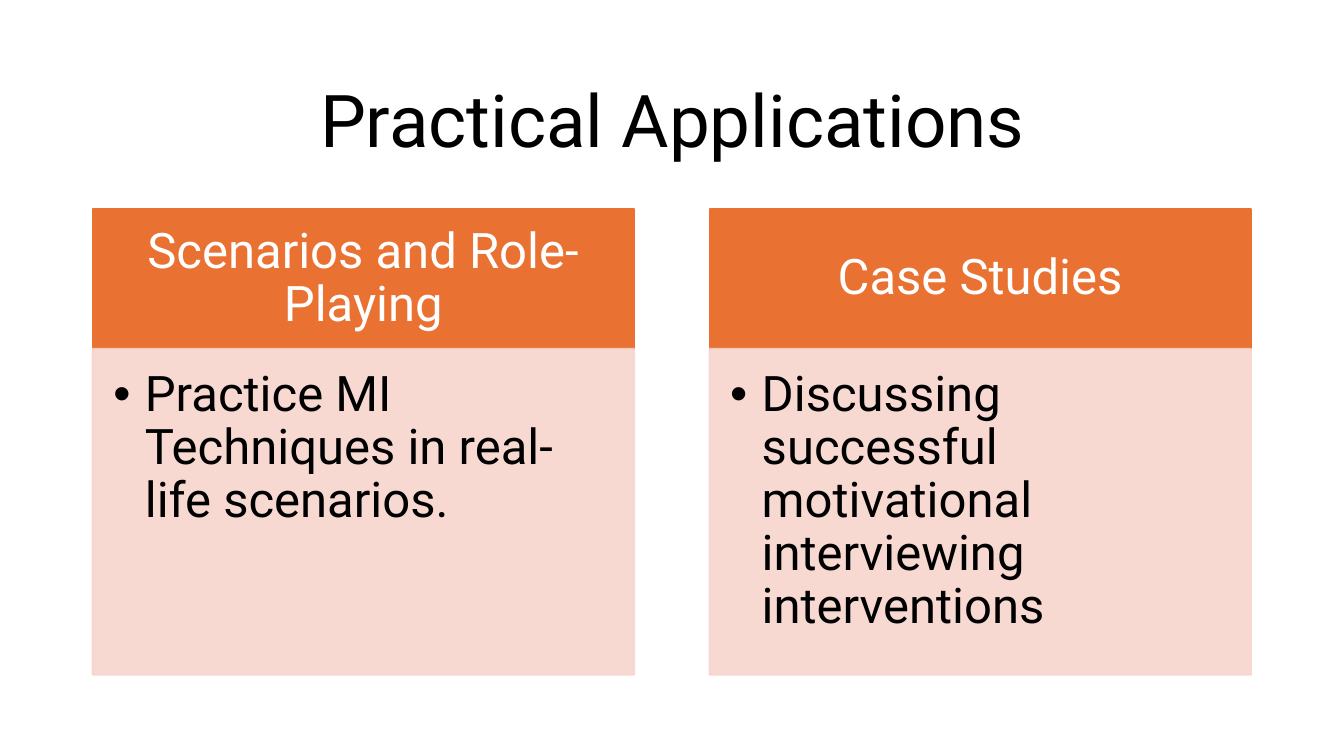
from lxml import etree
from pptx import Presentation
from pptx import util as u
from pptx.dml.color import RGBColor
from pptx.enum import text
from pptx.oxml.ns import qn

COLOURS = {"ink": "000000", "paper": "FFFFFF", "header": "E97132", "panel": "F7D5CE"}
FONT = "Roboto"

LEFT, PITCH, COLUMN_WIDTH = 66.24, 440.64, 386.64
HEADER_TOP, HEADER_HEIGHT = 149, 100.5
PANEL_TOP, PANEL_HEIGHT = 249.3, 232.6

COLUMNS = [
    ("Scenarios and Role-Playing", "Practice MI Techniques in real-life scenarios."),
    ("Case Studies", "Discussing successful motivational interviewing interventions"),
]


class SlideBuilder:
    """Holds the shared style and the current slide."""

    def __init__(self, slide):
        self.slide = slide

    def place_text(self, index, wording, box, size, colour, insets, centred=True, space_after=0):
        """Place a placeholder and fill it with one formatted paragraph."""
        shape = self.slide.placeholders[index]
        shape.left, shape.top, shape.width, shape.height = map(u.Pt, box)
        frame = shape.text_frame
        frame.text = wording
        frame.word_wrap = True
        frame.auto_size = text.MSO_AUTO_SIZE.NONE
        frame.margin_left, frame.margin_top, frame.margin_right, frame.margin_bottom = map(u.Pt, insets)
        frame.vertical_anchor = text.MSO_ANCHOR.MIDDLE if centred else text.MSO_ANCHOR.TOP
        paragraph = frame.paragraphs[0]
        paragraph.alignment = text.PP_ALIGN.CENTER if centred else text.PP_ALIGN.LEFT
        paragraph.line_spacing = 0.9
        paragraph.space_before = u.Pt(0)
        paragraph.space_after = u.Pt(space_after)
        paragraph.font.name = FONT
        paragraph.font.size = u.Pt(size)
        paragraph.font.bold = False
        paragraph.font.color.rgb = RGBColor.from_string(COLOURS[colour])
        return shape

    def paint(self, shape, colour, opacity=100):
        """Give fill and outline the same colour and opacity."""
        shape.line.width = u.Pt(1.5)
        for fill in (shape.fill, shape.line.fill):
            fill.solid()
            fill.fore_color.rgb = RGBColor.from_string(COLOURS[colour])
        if opacity < 100:
            for node in shape.element.spPr.iter(qn("a:srgbClr")):
                etree.SubElement(node, qn("a:alpha"), val=str(opacity * 1000))

    def title(self, wording):
        box = (LEFT, 43.92, 828, 89.28)
        self.place_text(0, wording, box, 52, "ink", (7.2, 3.6, 7.2, 3.6), space_after=6)

    def header(self, index, wording, left):
        box = (left, HEADER_TOP, COLUMN_WIDTH, HEADER_HEIGHT)
        shape = self.place_text(index, wording, box, 35, "paper", (19.6, 11.2, 19.6, 11.2))
        self.paint(shape, "header")

    def panel(self, index, wording, left):
        box = (left, PANEL_TOP, COLUMN_WIDTH, PANEL_HEIGHT)
        shape = self.place_text(index, wording, box, 35, "ink", (14.7, 14.7, 19.6, 22.1), centred=False)
        self.paint(shape, "panel", opacity=90)
        self.bullet(shape.text_frame.paragraphs[0])

    def bullet(self, paragraph):
        """Add a hanging bullet ahead of the paragraph's font settings."""
        properties = paragraph._p.get_or_add_pPr()
        properties.set("marL", str(u.Pt(22.5)))
        properties.set("indent", str(u.Pt(-22.5)))
        font_settings = properties.find(qn("a:defRPr"))
        for tag, name, value in (("a:buFont", "typeface", "Arial"), ("a:buChar", "char", "•")):
            node = etree.Element(qn(tag))
            node.set(name, value)
            font_settings.addprevious(node)


def main():
    presentation = Presentation()
    presentation.slide_width, presentation.slide_height = u.Pt(960), u.Pt(540)
    # Comparison layout: a title and two header-and-list pairs
    builder = SlideBuilder(presentation.slides.add_slide(presentation.slide_layouts[4]))

    # Title
    builder.title("Practical Applications")

    # Two columns, each a header above its list
    for column, (heading, item) in enumerate(COLUMNS):
        left = LEFT + column * PITCH
        builder.header(2 * column + 1, heading, left)
        builder.panel(2 * column + 2, item, left)

    presentation.save("out.pptx")


if __name__ == "__main__":
    main()
